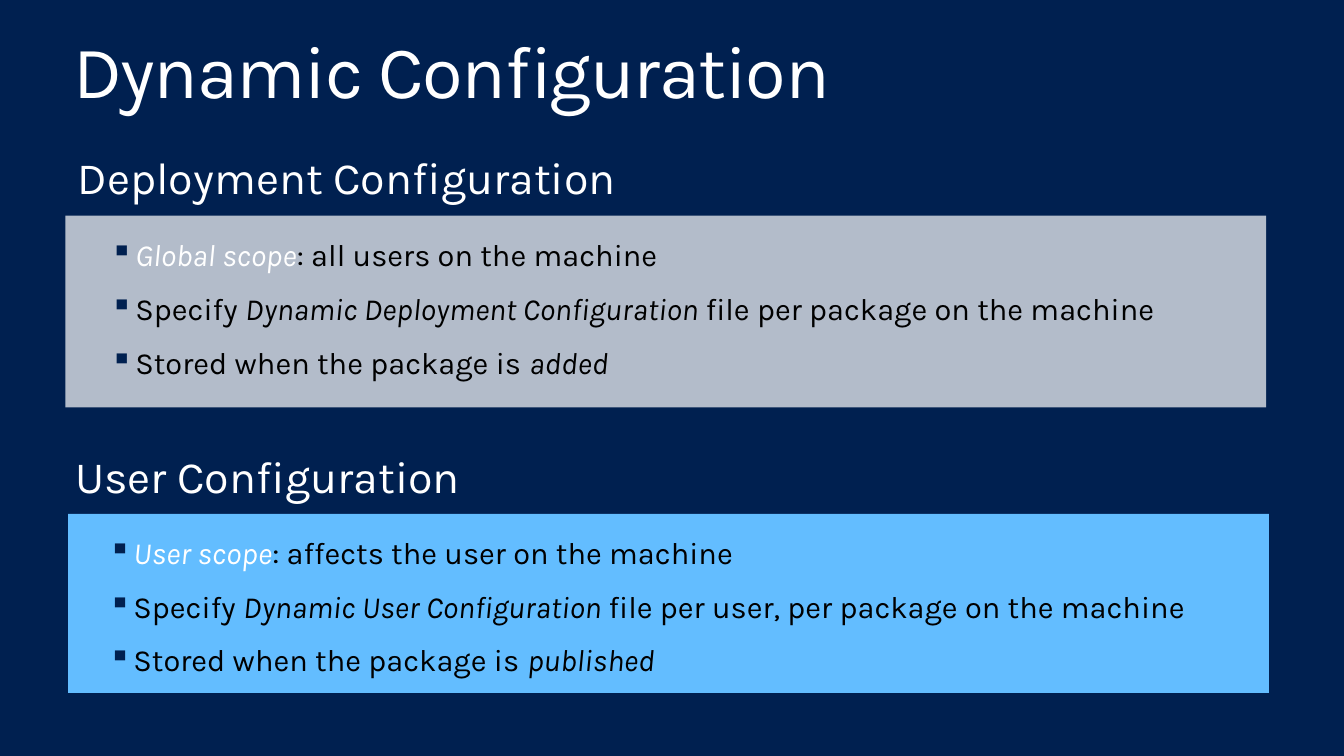
from lxml import etree
from pptx import Presentation
from pptx.dml.color import RGBColor
from pptx.enum.shapes import MSO_SHAPE
from pptx.enum.text import MSO_ANCHOR, PP_ALIGN
from pptx.oxml.ns import qn
from pptx.util import Cm, Pt

RECTANGLE = MSO_SHAPE.RECTANGLE
TOP = MSO_ANCHOR.TOP
LEFT = PP_ALIGN.LEFT

NAVY = RGBColor(0x00, 0x20, 0x50)
SKY = RGBColor(0x63, 0xBD, 0xFF)
WHITE = RGBColor(0xFF, 0xFF, 0xFF)
BLACK = RGBColor(0x00, 0x00, 0x00)

FONT = "Karla"
INSET = 0.25
BULLET_INDENT = Cm(0.64)

# Each bullet is a list of (text, colour, italic) runs.
DEPLOYMENT_BULLETS = [
    [("Global scope", WHITE, True), (": all users on the machine", BLACK, False)],
    [("Specify ", BLACK, False),
     ("Dynamic Deployment Configuration ", BLACK, True),
     ("file per package on the machine", BLACK, False)],
    [("Stored when the package is ", BLACK, False), ("added", BLACK, True)],
]
USER_BULLETS = [
    [("User scope", WHITE, True), (": affects the user on the machine", BLACK, False)],
    [("Specify ", BLACK, False),
     ("Dynamic User Configuration ", BLACK, True),
     ("file per user, per package on the machine", BLACK, False)],
    [("Stored when the package is ", BLACK, False), ("published", BLACK, True)],
]


def add_run(paragraph, text, size, color, italic=False):
    run = paragraph.add_run()
    run.text = text
    run.font.name = FONT
    run.font.size = Pt(size)
    run.font.color.rgb = color
    run.font.italic = italic
    return run


def prepare_frame(shape, left=INSET, top=INSET, right=INSET, bottom=INSET):
    """Set wrapping, top anchoring and insets in cm; return the text frame."""
    frame = shape.text_frame
    frame.word_wrap = True
    frame.vertical_anchor = TOP
    frame.margin_left, frame.margin_right = Cm(left), Cm(right)
    frame.margin_top, frame.margin_bottom = Cm(top), Cm(bottom)
    return frame


def add_text_box(shapes, box):
    return shapes.add_textbox(*map(Cm, box))


def add_heading(shapes, box, text, size, side_inset=INSET):
    frame = prepare_frame(add_text_box(shapes, box), left=side_inset, right=side_inset)
    paragraph = frame.paragraphs[0]
    paragraph.line_spacing = 0.9
    return add_run(paragraph, text, size, WHITE)


def add_panel(shapes, box, color, opacity=None):
    """Add a filled rectangle; opacity is a percentage."""
    panel = shapes.add_shape(RECTANGLE, *map(Cm, box))
    panel.shadow.inherit = False
    panel.line.fill.background()
    panel.fill.solid()
    panel.fill.fore_color.rgb = color
    if opacity is not None:
        srgb = panel.fill._xPr.find(qn("a:solidFill")).find(qn("a:srgbClr"))
        etree.SubElement(srgb, qn("a:alpha"), val=str(opacity * 1000))
    return panel


def set_bullet(paragraph):
    properties = paragraph._p.get_or_add_pPr()
    properties.set("marL", str(BULLET_INDENT))
    properties.set("indent", str(-BULLET_INDENT))
    bullet_color = etree.SubElement(properties, qn("a:buClr"))
    etree.SubElement(bullet_color, qn("a:srgbClr"), val=str(NAVY))
    etree.SubElement(properties, qn("a:buChar"), char="▪")


def fill_bullets(frame, bullets):
    for index, runs in enumerate(bullets):
        paragraph = frame.add_paragraph() if index else frame.paragraphs[0]
        paragraph.alignment = LEFT
        paragraph.space_before = Pt(12.2)
        set_bullet(paragraph)
        for text, color, italic in runs:
            add_run(paragraph, text, 22.4, color, italic)


def add_deployment_section(slide):
    shapes = slide.shapes.add_group_shape().shapes
    add_panel(shapes, (1.68, 5.54, 30.86, 4.93), WHITE, opacity=70)
    bullet_box = add_text_box(shapes, (2.59, 5.82, 28.98, 5.11))
    fill_bullets(prepare_frame(bullet_box), DEPLOYMENT_BULLETS)
    add_heading(shapes, (1.75, 3.76, 14.45, 1.8), "Deployment Configuration", 32.6)


def add_user_section(slide):
    shapes = slide.shapes.add_group_shape().shapes
    panel = add_panel(shapes, (1.75, 13.21, 30.86, 4.6), SKY)
    fill_bullets(prepare_frame(panel, left=1.04, top=0.51), USER_BULLETS)
    add_heading(shapes, (1.68, 11.43, 16.03, 1.8), "User Configuration", 32.6)


def main():
    presentation = Presentation()
    presentation.slide_width = Cm(34.54)
    presentation.slide_height = Cm(19.43)
    slide = presentation.slides.add_slide(presentation.slide_layouts[6])
    slide.background.fill.solid()
    slide.background.fill.fore_color.rgb = NAVY

    title = add_heading(slide.shapes, (1.47, 0.64, 31.6, 2.11),
                        "Dynamic Configuration", 54, side_inset=0.41)
    title._r.get_or_add_rPr().set("spc", "-100")
    add_deployment_section(slide)
    add_user_section(slide)
    presentation.save("out.pptx")


if __name__ == "__main__":
    main()
